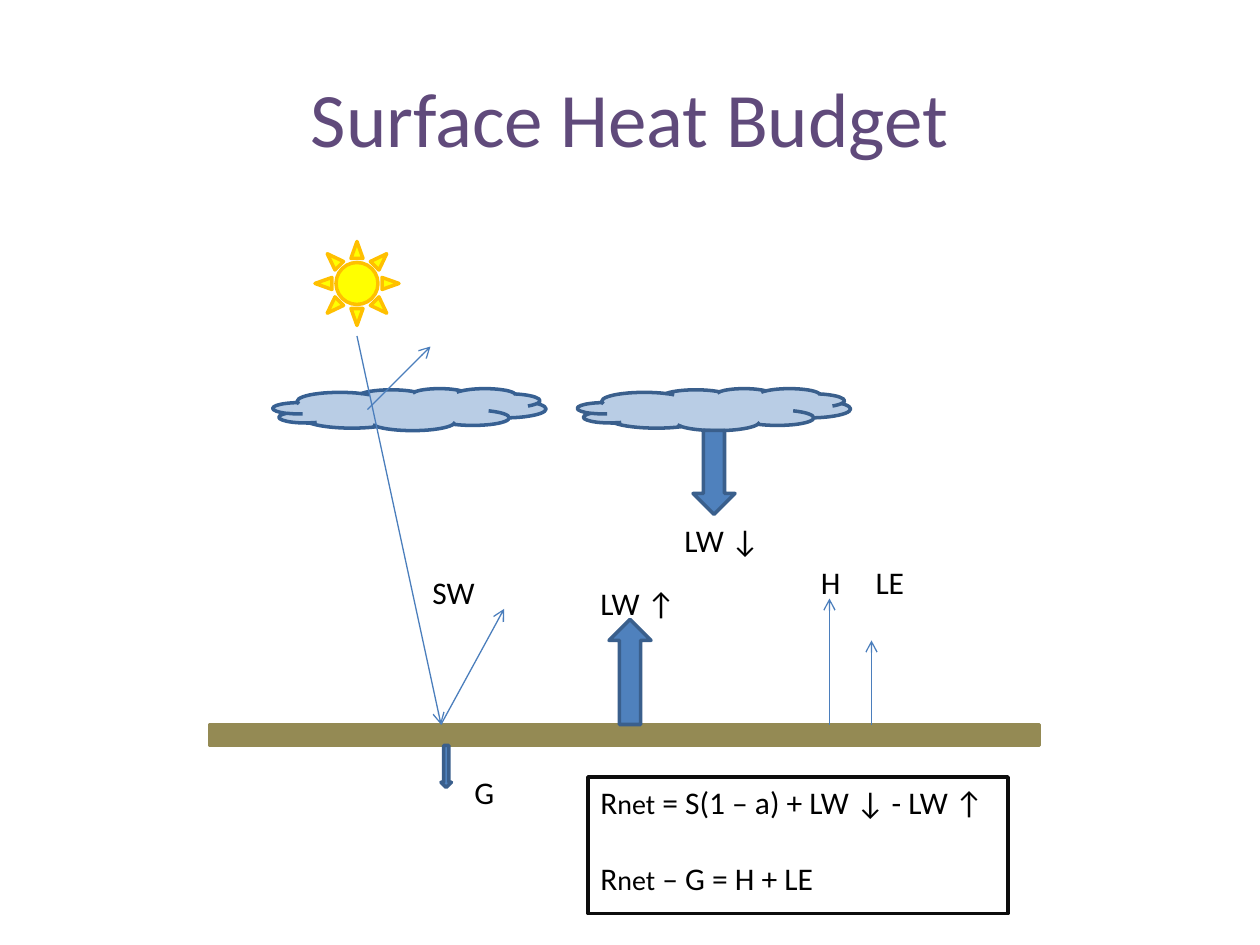
"""Build the surface heat budget slide."""
from lxml import etree
from pptx import Presentation
from pptx.dml.color import RGBColor
from pptx.enum import shapes, text
from pptx.oxml import ns
from pptx.util import Pt

KIND = shapes.MSO_SHAPE
GROUND_TOP = 414
BLUE, EDGE, RAY, CLOUD = "4F81BD", "3A5F8C", "4B7EBC", "B9CDE5"

TITLE = ("Surface Heat Budget", 36, 21.6, 648, 90)
BODIES = [
    (KIND.RECTANGLE, 120, GROUND_TOP, 474, 12, "948A54", "948A54"),
    (KIND.SUN, 180, 138, 48, 48, "FFFF00", "FFC000"),
    (KIND.CLOUD, 156, 222, 156, 24, CLOUD, "376092"),
    (KIND.CLOUD, 330, 222, 156, 24, CLOUD, EDGE),
]
RAYS = [
    (204, 192, 252, GROUND_TOP),
    (210, 234, 246, 198),
    (252, GROUND_TOP, 288, 348),
    (474, GROUND_TOP, 474, 342),
    (498, GROUND_TOP, 498, 366),
]
FLUXES = [
    (KIND.DOWN_ARROW, 396, 246, 24, 48, BLUE, EDGE),
    (KIND.UP_ARROW, 348, 354, 24, 60, BLUE, EDGE),
    (KIND.DOWN_ARROW, 252, 426, 6, 24, BLUE, EDGE),
]
LABELS = [
    ("SW", 240, 324, 39),
    ("LW ↑", 336, 330, 58),
    ("LW ↓", 384, 294, 58),
    ("G", 264, 438, 26),
    ("H", 462, 318, 26),
    ("LE", 493.2, 318, 32),
]
EQUATIONS = [
    [("R", 18), ("net", 16), (" = S(1 – a) + LW ↓ - LW ↑", 18)],
    [("R", 18), ("net", 16), (" – G = H + LE", 18)],
]
FRAME = (KIND.RECTANGLE, 336, 444, 240, 78, None, "0D0D0D")


def color(value):
    return RGBColor.from_string(value)


def add_body(slide, kind, left, top, width, height, fill, edge):
    body = slide.shapes.add_shape(kind, Pt(left), Pt(top), Pt(width), Pt(height))
    body.shadow.inherit = False
    if fill:
        body.fill.solid()
        body.fill.fore_color.rgb = color(fill)
    else:
        body.fill.background()
    body.line.color.rgb = color(edge)
    body.line.width = Pt(2)


def add_ray(slide, *ends):
    ray = slide.shapes.add_connector(shapes.MSO_CONNECTOR.STRAIGHT, *map(Pt, ends))
    ray.line.color.rgb = color(RAY)
    ray.line.width = Pt(0.75)
    etree.SubElement(ray.line._get_or_add_ln(), ns.qn("a:tailEnd"), type="arrow")
    etree.SubElement(ray._element.spPr, ns.qn("a:effectLst"))


def add_text(slide, lines, left, top, width, height, ink="000000", frame_format=None, line_format=None):
    frame = slide.shapes.add_textbox(Pt(left), Pt(top), Pt(width), Pt(height)).text_frame
    for name, value in (frame_format or {"word_wrap": False}).items():
        setattr(frame, name, value)
    for index, parts in enumerate(lines):
        line = frame.add_paragraph() if index else frame.paragraphs[0]
        for name, value in (line_format or {}).items():
            setattr(line, name, value)
        if index:
            line.space_before = Pt(22)
        for words, size in parts:
            run = line.add_run()
            run.text = words
            for name, value in {"name": "Calibri", "size": Pt(size)}.items():
                setattr(run.font, name, value)
            run.font.color.rgb = color(ink)


def main():
    deck = Presentation()
    deck.slide_width, deck.slide_height = Pt(720), Pt(540)
    slide = deck.slides.add_slide(deck.slide_layouts[6])
    heading, *place = TITLE
    add_text(slide, [[(heading, 44)]], *place, ink="604A7B",
             frame_format={"word_wrap": True, "vertical_anchor": text.MSO_ANCHOR.MIDDLE},
             line_format={"alignment": text.PP_ALIGN.CENTER})
    for body in BODIES:
        add_body(slide, *body)
    for ray in RAYS:
        add_ray(slide, *ray)
    for flux in FLUXES:
        add_body(slide, *flux)
    for label, left, top, width in LABELS:
        add_text(slide, [[(label, 18)]], left, top, width, 29)
    add_text(slide, EQUATIONS, 336, 444, 239, 73)
    add_body(slide, *FRAME)
    deck.save("out.pptx")


if __name__ == "__main__":
    main()
